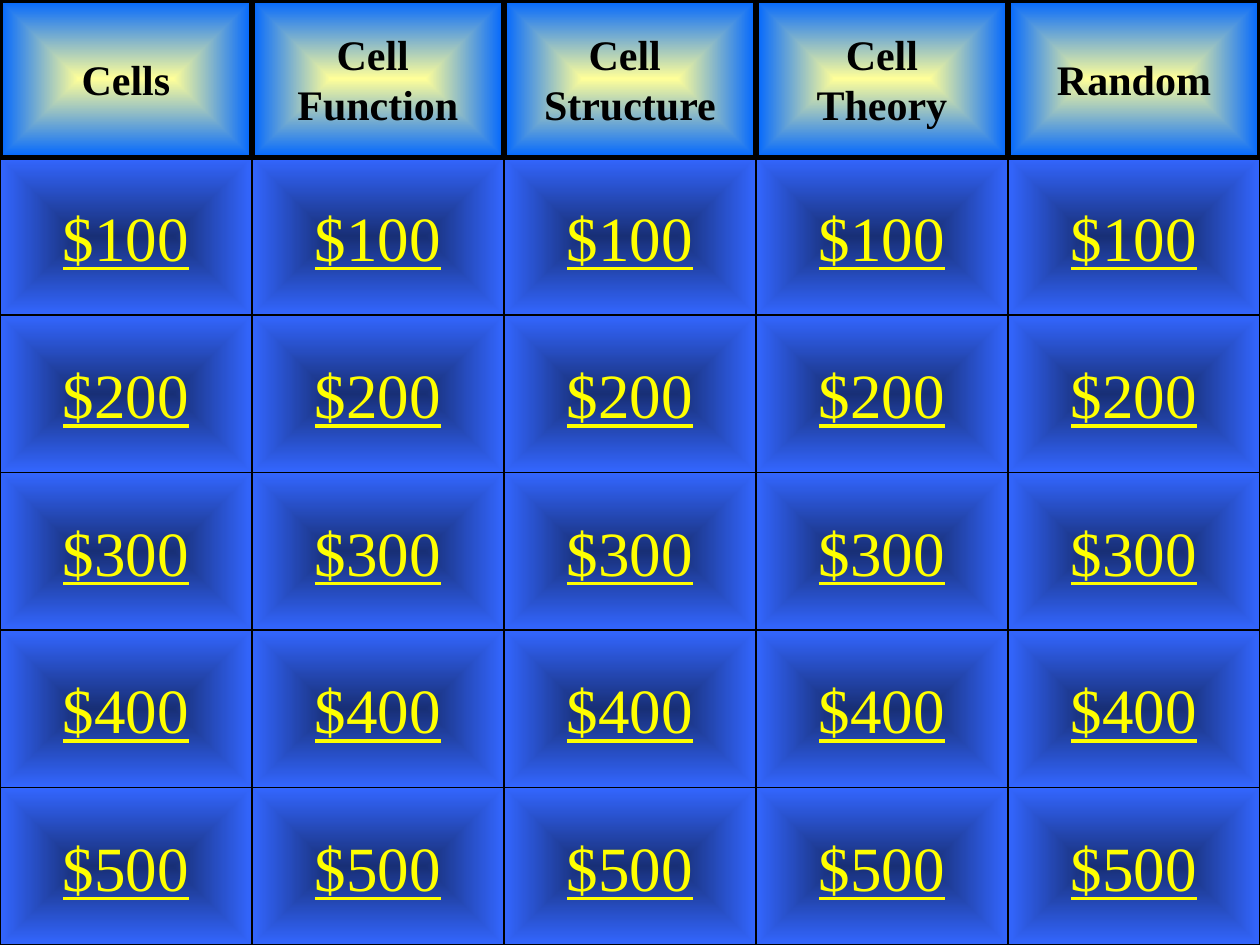
from lxml.etree import SubElement
from pptx import Presentation
from pptx.dml.color import RGBColor
from pptx.enum.shapes import MSO_SHAPE
from pptx.enum.text import MSO_ANCHOR, PP_ALIGN
from pptx.oxml.ns import qn
from pptx.util import Inches, Pt

TOPICS = ["Cells", "Cell \nFunction", "Cell \nStructure", "Cell\nTheory", "Random"]
PRIZES = ["$100", "$200", "$300", "$400", "$500"]
WIDE, HIGH = 2, 1.25
BLUE, NAVY = "3366FF", "182F76"


def color(code):
    return RGBColor.from_string(code)


def shade(fill, root, inner, outer, kind):
    """Fill with a gradient that spreads from the centre to the edges."""
    fill.gradient()
    for stop, code, place in zip(fill.gradient_stops, (inner, outer), (0, 1)):
        stop.color.rgb = color(code)
        stop.position = place
    grad = root.find(".//" + qn("a:gradFill"))
    grad.remove(grad.find(qn("a:lin")))
    route = SubElement(grad, qn("a:path"), {"path": kind})
    SubElement(route, qn("a:fillToRect"), dict.fromkeys("ltrb", "50000"))


def add_cell(slide, form, col, row, text, line):
    cell = slide.shapes.add_shape(form, Inches(col * WIDE), Inches(row * HIGH),
                                  Inches(WIDE), Inches(HIGH))
    cell.shadow.inherit = False
    cell.line.color.rgb = color("000000")
    cell.line.width = Pt(line)
    frame = cell.text_frame
    frame.word_wrap = False
    frame.vertical_anchor = MSO_ANCHOR.MIDDLE
    frame.text = text
    for para in frame.paragraphs:
        para.alignment = PP_ALIGN.CENTER
        para.font.name = "Times New Roman"
    return cell


def add_prize(slide, col, row, text):
    cell = add_cell(slide, MSO_SHAPE.ACTION_BUTTON_CUSTOM, col, row, text, 0.75)
    shade(cell.fill, cell.element, NAVY, BLUE, "rect")
    font = cell.text_frame.paragraphs[0].font
    font.size = Pt(36)
    font.underline = True
    font.color.rgb = color("FFFF00")


def add_topic(slide, col, text):
    cell = add_cell(slide, MSO_SHAPE.RECTANGLE, col, 0, text, 3)
    shade(cell.fill, cell.element, "FFFF99", "0066FF", "shape")
    for para in cell.text_frame.paragraphs:
        para.font.size = Pt(24)
        para.font.bold = True
        para.font.color.rgb = color("000000")


def main():
    deck = Presentation()
    deck.slide_width, deck.slide_height = Inches(10), Inches(7.5)
    slide = deck.slides.add_slide(deck.slide_layouts[6])
    shade(slide.background.fill, slide.element, BLUE, NAVY, "shape")
    for col in range(len(TOPICS)):
        for row, prize in enumerate(PRIZES, 1):
            add_prize(slide, col, row, prize)
    for col, topic in enumerate(TOPICS):
        add_topic(slide, col, topic)
    deck.save("out.pptx")


if __name__ == "__main__":
    main()
